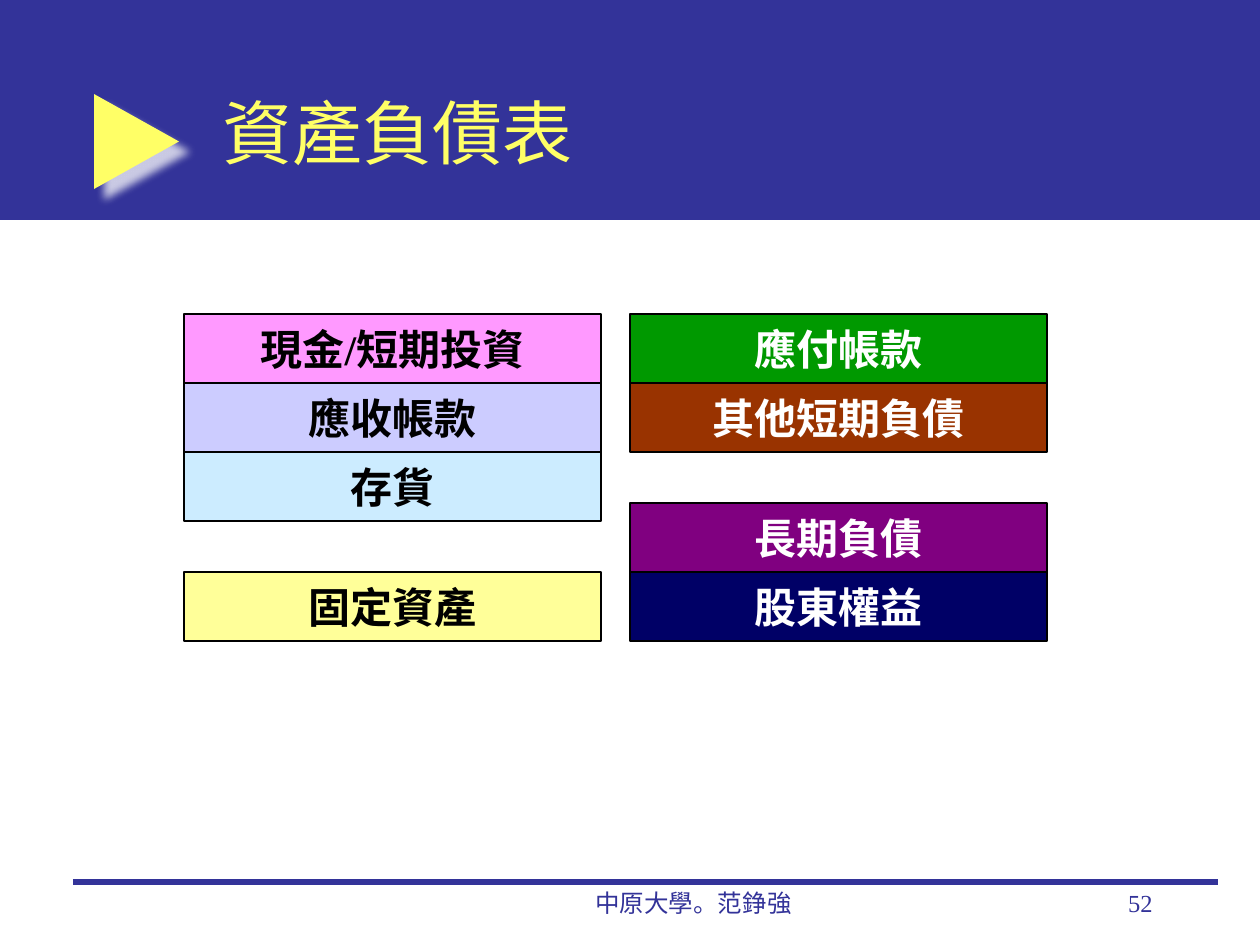
"""Build the balance sheet slide: assets on the left, liabilities and equity on the right."""

from dataclasses import dataclass

from lxml.etree import SubElement
from pptx import Presentation
from pptx.dml.color import RGBColor
from pptx.enum.shapes import MSO_CONNECTOR, MSO_SHAPE
from pptx.enum.text import MSO_ANCHOR, PP_ALIGN
from pptx.oxml import parse_xml
from pptx.oxml.ns import nsdecls, qn
from pptx.util import Pt

EMU_PER_PX = 914400 / 126
SLIDE_WIDTH, SLIDE_HEIGHT = 1260, 945
NAVY, YELLOW, BLACK, WHITE = "333399", "FFFF66", "000000", "FFFFFF"
SERIF, SANS = "Times New Roman", "Arial"
ASSETS_LEFT, LIABILITIES_LEFT = 184, 630
ACCOUNT_WIDTH, ACCOUNT_HEIGHT = 417, 69
CURRENT_TOP, BOTTOM_ROW_TOP = 314, 572
FOOTER_TOP, FOOTER_HEIGHT = 882, 63


@dataclass(frozen=True)
class Account:
    name: str
    left: int
    top: int
    fill: str
    text_color: str


@dataclass(frozen=True)
class Label:
    text: str
    left: int
    top: int
    width: int
    height: int
    size: int
    font: str
    color: str
    alignment: PP_ALIGN
    anchor: MSO_ANCHOR


def current_row(index: int) -> int:
    return CURRENT_TOP + index * ACCOUNT_HEIGHT


ACCOUNTS = [
    Account("現金/短期投資", ASSETS_LEFT, current_row(0), "FF99FF", BLACK),
    Account("應收帳款", ASSETS_LEFT, current_row(1), "CCCCFF", BLACK),
    Account("存貨", ASSETS_LEFT, current_row(2), "CCECFF", BLACK),
    Account("固定資產", ASSETS_LEFT, BOTTOM_ROW_TOP, "FFFF99", BLACK),
    Account("應付帳款", LIABILITIES_LEFT, current_row(0), "009900", WHITE),
    Account("其他短期負債", LIABILITIES_LEFT, current_row(1), "993300", WHITE),
    Account("長期負債", LIABILITIES_LEFT, BOTTOM_ROW_TOP - ACCOUNT_HEIGHT, "800080", WHITE),
    Account("股東權益", LIABILITIES_LEFT, BOTTOM_ROW_TOP, "000066", WHITE),
]

LABELS = [
    Label("中原大學。范錚強", 494, FOOTER_TOP, 399, FOOTER_HEIGHT,
          14, SERIF, NAVY, PP_ALIGN.CENTER, MSO_ANCHOR.TOP),
    Label("52", 903, FOOTER_TOP, 262, FOOTER_HEIGHT,
          14, SERIF, NAVY, PP_ALIGN.RIGHT, MSO_ANCHOR.TOP),
    Label("資產負債表", 210, 53, 955, 158,
          40, SANS, YELLOW, PP_ALIGN.LEFT, MSO_ANCHOR.MIDDLE),
]


def px(length: int) -> int:
    return round(length * EMU_PER_PX)


def rgb(color: str) -> RGBColor:
    return RGBColor.from_string(color)


def add_filled_shape(slide, kind: MSO_SHAPE, left: int, top: int, width: int, height: int, fill: str):
    shape = slide.shapes.add_shape(kind, px(left), px(top), px(width), px(height))
    shape.shadow.inherit = False
    shape.fill.solid()
    shape.fill.fore_color.rgb = rgb(fill)
    shape.line.fill.background()
    return shape


def write_text(shape, text: str, size: int, font: str, color: str,
               alignment: PP_ALIGN, anchor: MSO_ANCHOR, bold: bool = False) -> None:
    frame = shape.text_frame
    frame.vertical_anchor = anchor
    paragraph = frame.paragraphs[0]
    paragraph.text = text
    paragraph.alignment = alignment
    paragraph.font.size = Pt(size)
    paragraph.font.name = font
    paragraph.font.bold = bold
    paragraph.font.color.rgb = rgb(color)


def add_label(slide, label: Label) -> None:
    box = slide.shapes.add_textbox(px(label.left), px(label.top), px(label.width), px(label.height))
    box.text_frame.word_wrap = True
    write_text(box, label.text, label.size, label.font, label.color, label.alignment, label.anchor)


def add_account(slide, account: Account) -> None:
    shape = add_filled_shape(slide, MSO_SHAPE.RECTANGLE, account.left, account.top,
                             ACCOUNT_WIDTH, ACCOUNT_HEIGHT, account.fill)
    shape.line.color.rgb = rgb(BLACK)
    shape.line.width = Pt(0.75)
    shape.text_frame.word_wrap = False
    write_text(shape, account.name, 24, SERIF, account.text_color,
               PP_ALIGN.CENTER, MSO_ANCHOR.MIDDLE, bold=True)


def add_title_marker(slide) -> None:
    marker = add_filled_shape(slide, MSO_SHAPE.RIGHT_ARROW, 94, 94, 85, 95, YELLOW)
    marker.adjustments[0] = 0.38
    marker.adjustments[1] = 1
    effects = marker._element.spPr.find(qn("a:effectLst"))
    effects.append(parse_xml(
        f'<a:outerShdw {nsdecls("a")} blurRad="{Pt(5)}" dist="{Pt(8.5)}" dir="2700000" '
        f'algn="ctr" rotWithShape="0"><a:srgbClr val="{WHITE}"><a:alpha val="75000"/>'
        "</a:srgbClr></a:outerShdw>"
    ))


def add_footer_rule(slide) -> None:
    rule = slide.shapes.add_connector(MSO_CONNECTOR.STRAIGHT, px(73), px(FOOTER_TOP), px(1218), px(FOOTER_TOP))
    rule.line.color.rgb = rgb(NAVY)
    rule.line.width = Pt(3)
    SubElement(rule._element.spPr, qn("a:effectLst"))


def main() -> None:
    presentation = Presentation()
    presentation.slide_width = px(SLIDE_WIDTH)
    presentation.slide_height = px(SLIDE_HEIGHT)
    slide = presentation.slides.add_slide(presentation.slide_layouts[6])
    add_filled_shape(slide, MSO_SHAPE.RECTANGLE, 0, 0, SLIDE_WIDTH, 220, NAVY)
    add_title_marker(slide)
    add_footer_rule(slide)
    for label in LABELS:
        add_label(slide, label)
    for account in ACCOUNTS:
        add_account(slide, account)
    presentation.save("out.pptx")


if __name__ == "__main__":
    main()
